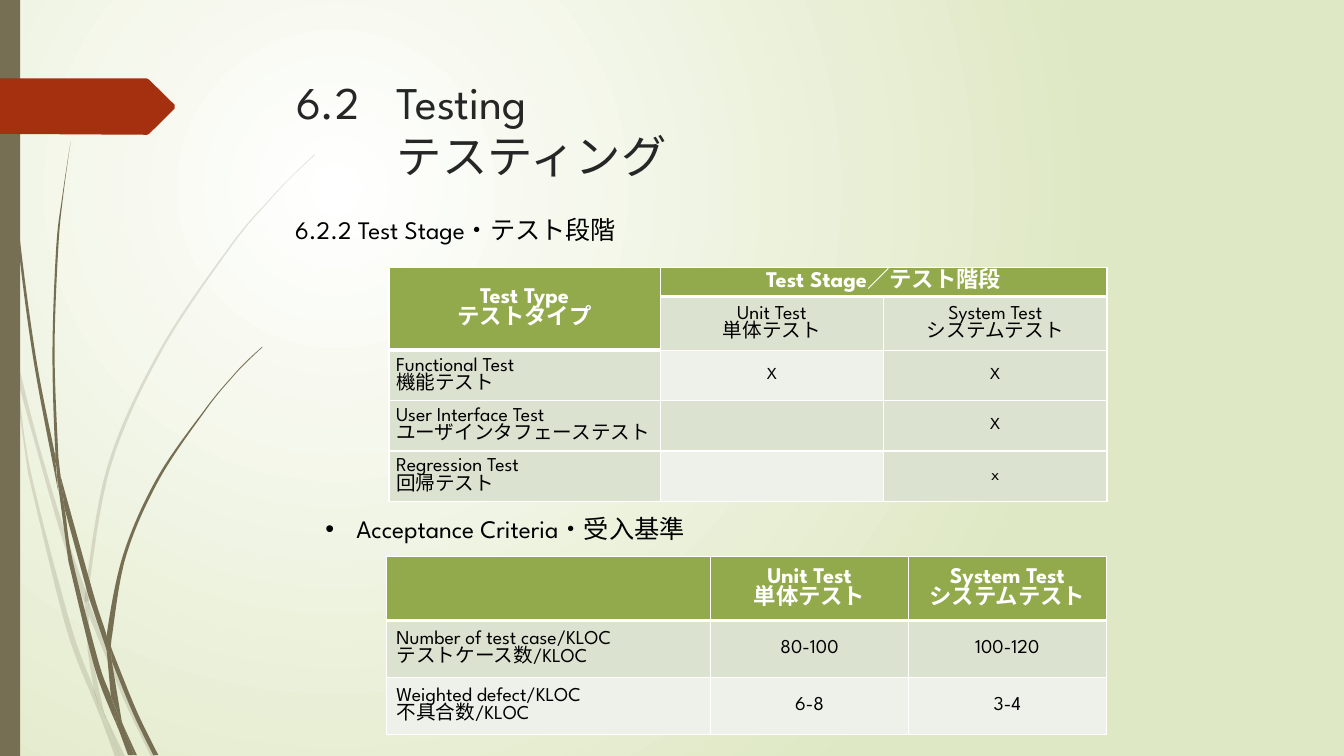
from dataclasses import dataclass

from lxml import etree
from pptx import Presentation
from pptx.dml.color import RGBColor
from pptx.enum.shapes import MSO_SHAPE
from pptx.enum.text import MSO_ANCHOR, PP_ALIGN
from pptx.oxml import parse_xml
from pptx.oxml.ns import nsdecls, qn
from pptx.util import Pt

LEFT, CENTER = PP_ALIGN.LEFT, PP_ALIGN.CENTER
TOP, MIDDLE = MSO_ANCHOR.TOP, MSO_ANCHOR.MIDDLE
RECTANGLE = MSO_SHAPE.RECTANGLE
EMU_PER_PX = 3810

Point = tuple[float, float]
Box = tuple[int, int, int, int]


@dataclass(frozen=True)
class Theme:
    font: str = "League Spartan"
    title_size: float = 32.4
    section_size: float = 18
    header_size: float = 16
    body_size: float = 14
    mark_size: float = 12
    title: str = "262626"
    text: str = "000000"
    white: str = "FFFFFF"
    glow: str = "DFE8C4"
    stem: str = "766F54"
    ribbon: str = "A53010"
    header: str = "92AA4C"
    band: str = "DCE2D0"
    pale: str = "EEF1E9"


THEME = Theme()


@dataclass(frozen=True)
class Blade:
    down: list[Point]
    up: list[Point]


@dataclass(frozen=True)
class Cell:
    text: str = ""
    fill: str = THEME.band
    size: float = THEME.body_size
    align: PP_ALIGN = CENTER
    rows: int = 1
    columns: int = 1


@dataclass(frozen=True)
class Grid:
    left: int
    top: int
    columns: list[int]
    rows: list[int]
    cells: list[list[Cell | None]]
    margins: tuple[int, int]


def header(text: str = "", rows: int = 1, columns: int = 1) -> Cell:
    return Cell(text, THEME.header, THEME.header_size, CENTER, rows, columns)


def label(text: str, fill: str = THEME.band) -> Cell:
    return Cell(text, fill, align=LEFT)


def mark(text: str, fill: str = THEME.band) -> Cell:
    return Cell(text, fill, THEME.mark_size)


FAINT_BLADES = [
    Blade([(0, 677), (22, 773), (26, 840)], [(24, 826), (0, 718)]),
    Blade([(34, 828), (87, 1039), (149, 1248), (204, 1406)], [(202, 1438), (139, 1253), (41, 902)]),
    Blade([(211, 1430), (221, 1457), (305, 1661), (372, 1802)], [(360, 1802), (295, 1666), (211, 1464)]),
    Blade([(252, 1706), (298, 1802)], [(286, 1802)]),
    Blade([(26, 840), (41, 902), (74, 1126), (168, 1486), (223, 1639), (238, 1697), (242, 1714)],
          [(221, 1663), (156, 1490), (67, 1128)]),
    Blade([(202, 1438), (211, 1459), (211, 1464), (218, 1550), (247, 1694), (252, 1706)],
          [(230, 1661), (223, 1639), (209, 1550)]),
    Blade([(749, 367), (694, 420), (643, 473), (547, 586), (379, 835), (257, 1106), (204, 1402), (211, 1430)],
          [(211, 1402), (264, 1109), (384, 838), (550, 588), (644, 475), (696, 420), (749, 370)]),
    Blade([(242, 1714), (286, 1802)], [(274, 1802)]),
    Blade([(204, 1406), (211, 1430), (211, 1464)], [(211, 1459), (202, 1438)]),
    Blade([(223, 1639), (230, 1661), (252, 1706), (286, 1802)], [(242, 1714), (238, 1697)]),
]
DARK_BLADES = [
    Blade([(7, 0), (10, 115), (17, 264), (41, 559), (79, 852), (134, 1145), (137, 1154)],
          [(132, 1097), (132, 1087), (86, 852), (46, 557), (19, 262), (12, 115), (10, 0)]),
    Blade([(144, 1133), (223, 1416), (254, 1514), (254, 1548)], [(211, 1421), (154, 1212)]),
    Blade([(264, 1538), (271, 1558), (326, 1694), (377, 1798)], [(365, 1798), (317, 1699), (266, 1574)]),
    Blade([(137, 1145), (154, 1212), (173, 1334), (235, 1577), (264, 1658), (278, 1721), (281, 1733)],
          [(266, 1699), (223, 1582), (163, 1337)]),
    Blade([(168, 338), (149, 463), (134, 588), (125, 838), (132, 1078), (144, 1133)],
          [(139, 1087), (130, 838), (139, 588), (151, 463), (168, 338)]),
    Blade([(293, 1726), (326, 1798)], [(319, 1798)]),
    Blade([(132, 1078), (144, 1133), (154, 1212)], [(137, 1145), (132, 1087)]),
    Blade([(624, 826), (588, 859), (554, 895), (490, 972), (374, 1138), (293, 1322), (254, 1514), (264, 1538)],
          [(266, 1519), (300, 1325), (379, 1142), (492, 974), (554, 898), (588, 862), (626, 826)]),
    Blade([(281, 1733), (314, 1798)], [(305, 1798)]),
    Blade([(254, 1548), (262, 1562), (266, 1574), (290, 1718), (293, 1726)], [(278, 1694), (264, 1658)]),
    Blade([(254, 1514), (264, 1538), (266, 1574)], [(262, 1562), (254, 1548)]),
    Blade([(264, 1658), (278, 1694), (293, 1726), (319, 1798)], [(312, 1798), (281, 1733), (278, 1721)]),
]
RIBBON = [(0, 187), (350, 187), (355, 190), (416, 250), (416, 258), (355, 319), (350, 321), (0, 319)]

STAGES = Grid(926, 636, [646, 532, 532], [70, 108, 120, 120, 120], [
    [header("Test Type\nテストタイプ", rows=2), header("Test Stage／テスト階段", columns=2), None],
    [None, Cell("Unit Test\n単体テスト"), Cell("System Test\nシステムテスト")],
    [label("Functional Test\n機能テスト"), mark("X", THEME.pale), mark("X")],
    [label("User Interface Test\nユーザインタフェーステスト"), Cell(), mark("X")],
    [label("Regression Test\n回帰テスト"), Cell(fill=THEME.pale), mark("x")],
], (17, 0))
CRITERIA = Grid(920, 1325, [772, 471, 471], [139, 122, 122], [
    [header(), header("Unit Test\n単体テスト"), header("System Test\nシステムテスト")],
    [label("Number of test case/KLOC\nテストケース数/KLOC"), Cell("80-100"), Cell("100-120")],
    [label("Weighted defect/KLOC\n不具合数/KLOC", THEME.pale), Cell("6-8", THEME.pale), Cell("3-4", THEME.pale)],
], (24, 12))


def px(length: float) -> int:
    return round(length * EMU_PER_PX)


def write_text(frame, text: str, *, size: float, color: str, bold: bool = False,
               align: PP_ALIGN = LEFT, hanging: int = 0, bullet: str = "") -> None:
    frame.text = text
    for paragraph in frame.paragraphs:
        paragraph.alignment = align
        properties = paragraph._p.get_or_add_pPr()
        if hanging:
            properties.set("marL", str(px(hanging)))
            properties.set("indent", str(-px(hanging)))
        if bullet:
            etree.SubElement(properties, qn("a:buFont"), typeface="Arial")
            etree.SubElement(properties, qn("a:buChar"), char=bullet)
        for run in paragraph.runs:
            run.font.name, run.font.size, run.font.bold = THEME.font, Pt(size), bold
            run.font.color.rgb = RGBColor.from_string(color)
            etree.SubElement(run.font._element, qn("a:ea"), typeface=THEME.font)


def paint(shape, color: str, opacity: int = 100) -> None:
    shape.shadow.inherit = False
    shape.line.fill.background()
    shape.fill.solid()
    shape.fill.fore_color.rgb = RGBColor.from_string(color)
    if opacity < 100:
        tint = shape._element.spPr.find(".//" + qn("a:srgbClr"))
        etree.SubElement(tint, qn("a:alpha"), val=str(opacity * 1000))


def set_background(slide) -> None:
    slide.element.find(qn("p:cSld")).insert(0, parse_xml(
        f'<p:bg {nsdecls("p", "a")}><p:bgPr><a:gradFill rotWithShape="1"><a:gsLst>'
        f'<a:gs pos="0"><a:srgbClr val="{THEME.white}"/></a:gs>'
        f'<a:gs pos="100000"><a:srgbClr val="{THEME.glow}"/></a:gs></a:gsLst>'
        '<a:path path="circle"><a:fillToRect l="50000" t="50000" r="100000" b="100000"/></a:path>'
        '</a:gradFill><a:effectLst/></p:bgPr></p:bg>'))


def bezier(edge: list[Point]) -> list[Point]:
    padded = [edge[0], *edge, edge[-1]]
    points = []
    for a, b, c, d in zip(padded, padded[1:], padded[2:], padded[3:]):
        points.append((b[0] + (c[0] - a[0]) / 6, b[1] + (c[1] - a[1]) / 6))
        points.append((c[0] - (d[0] - b[0]) / 6, c[1] - (d[1] - b[1]) / 6))
        points.append(c)
    return points


def draw_outline(shapes, points: list[Point], color: str, opacity: int = 100, curved: bool = False) -> None:
    outline = [(px(x), px(y)) for x, y in points]
    builder = shapes.build_freeform(*outline[0])
    builder.add_line_segments(outline[1:], close=True)
    shape = builder.convert_to_shape()
    lines = list(shape._element.iter(qn("a:lnTo"))) if curved else []
    for first, second, third in zip(lines[::3], lines[1::3], lines[2::3]):
        curve = etree.Element(qn("a:cubicBezTo"))
        first.addprevious(curve)
        for line in (first, second, third):
            curve.append(line[0])
            line.getparent().remove(line)
    paint(shape, color, opacity)


def draw_blades(slide, blades: list[Blade], opacity: int) -> None:
    group = slide.shapes.add_group_shape()
    for blade in blades:
        points = [blade.down[0], *bezier(blade.down), *[blade.up[0]] * 3, *bezier(blade.up)]
        draw_outline(group.shapes, points, THEME.stem, opacity, curved=True)


def draw_section(slide, box: Box, text: str, hanging: int = 0, bullet: str = "") -> None:
    frame = slide.shapes.add_textbox(*map(px, box)).text_frame
    frame.word_wrap = True
    write_text(frame, text, size=THEME.section_size, color=THEME.text, hanging=hanging, bullet=bullet)


def draw_grid(slide, grid: Grid) -> None:
    box = (grid.left, grid.top, sum(grid.columns), sum(grid.rows))
    table = slide.shapes.add_table(len(grid.rows), len(grid.columns), *map(px, box)).table
    for column, width in zip(table.columns, grid.columns):
        column.width = px(width)
    for row, height in zip(table.rows, grid.rows):
        row.height = px(height)
    for y, cells in enumerate(grid.cells):
        for x, content in enumerate(cells):
            if content is None:
                continue
            cell = table.cell(y, x)
            if content.rows * content.columns > 1:
                cell.merge(table.cell(y + content.rows - 1, x + content.columns - 1))
            is_header = content.fill == THEME.header
            for side, width in zip("LRTB", (1, 1, 1, 3 if is_header else 1)):
                cell._tc.get_or_add_tcPr().append(parse_xml(
                    f'<a:ln{side} {nsdecls("a")} w="{Pt(width)}"><a:solidFill>'
                    f'<a:srgbClr val="{THEME.white}"/></a:solidFill></a:ln{side}>'))
            cell.fill.solid()
            cell.fill.fore_color.rgb = RGBColor.from_string(content.fill)
            cell.vertical_anchor = MIDDLE
            cell.margin_left = cell.margin_right = px(grid.margins[0])
            cell.margin_top = cell.margin_bottom = px(grid.margins[1])
            write_text(cell.text_frame, content.text, size=content.size, bold=is_header,
                       color=THEME.white if is_header else THEME.text, align=content.align)


def main() -> None:
    presentation = Presentation()
    presentation.slide_width, presentation.slide_height = px(3200), px(1800)
    slide = presentation.slides.add_slide(presentation.slide_layouts[5])
    set_background(slide)
    draw_blades(slide, FAINT_BLADES, 20)
    draw_blades(slide, DARK_BLADES, 100)
    paint(slide.shapes.add_shape(RECTANGLE, 0, 0, px(48), px(1800)), THEME.stem)
    draw_outline(slide.shapes, RIBBON, THEME.ribbon)
    title = slide.shapes.title
    title.left, title.top, title.width, title.height = map(px, (681, 164, 2340, 336))
    title.text_frame.vertical_anchor = TOP
    write_text(title.text_frame, "6.2\tTesting\vテスティング", size=THEME.title_size,
               color=THEME.title, hanging=240)
    draw_section(slide, (679, 499, 1282, 170), "6.2.2 Test Stage・テスト段階")
    draw_grid(slide, STAGES)
    draw_section(slide, (751, 1210, 1442, 170), "Acceptance Criteria・受入基準", 74, "•")
    draw_grid(slide, CRITERIA)
    presentation.save("out.pptx")


if __name__ == "__main__":
    main()
